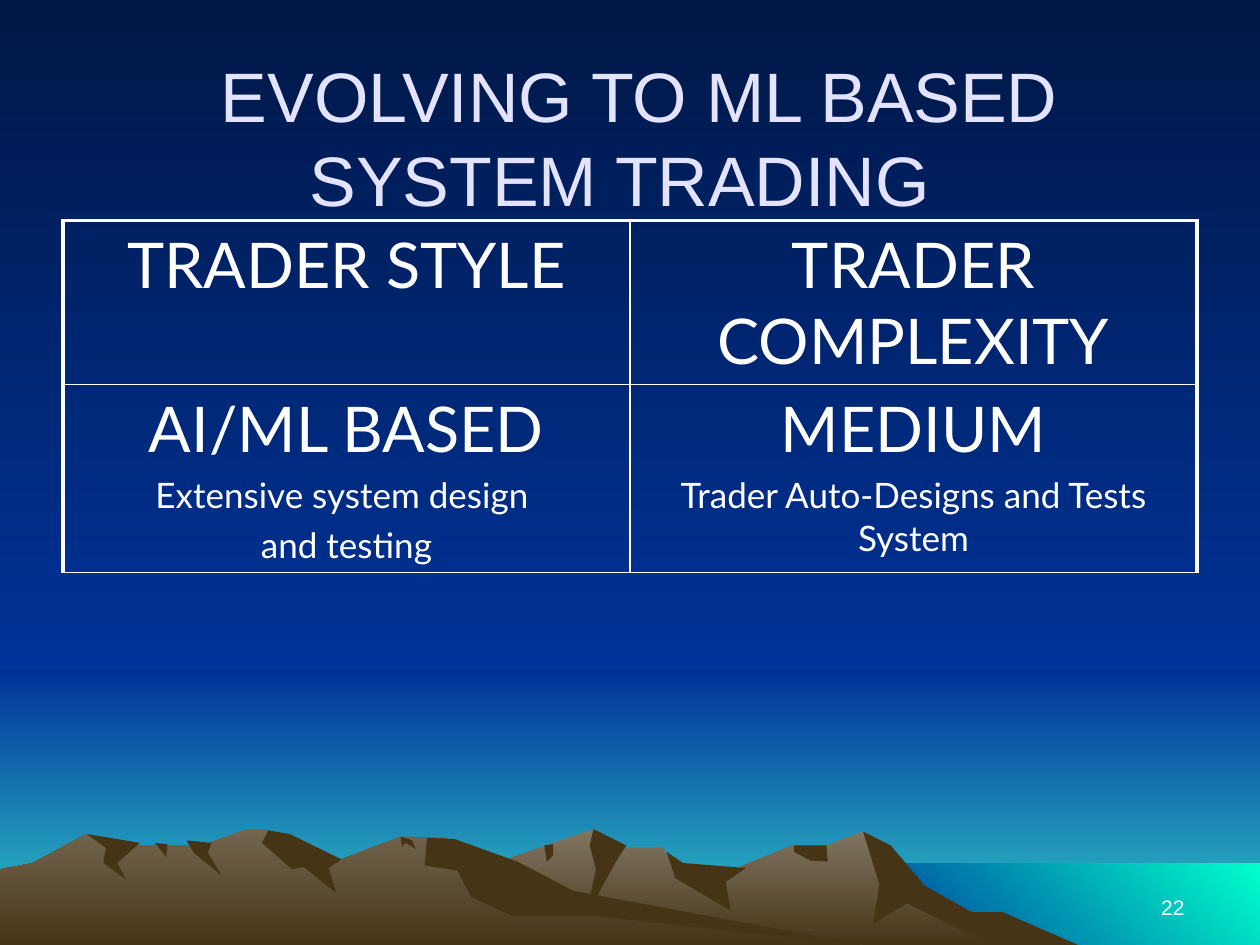
from pptx import Presentation
from pptx.dml.color import RGBColor
from pptx.enum.shapes import MSO_SHAPE
from pptx.enum.text import MSO_ANCHOR, PP_ALIGN
from pptx.oxml.ns import qn
from pptx.util import Pt
from lxml import etree

PX = 9144
RECT = MSO_SHAPE.RECTANGLE
MID, LOW = MSO_ANCHOR.MIDDLE, MSO_ANCHOR.BOTTOM
MIDDLE, RIGHT = PP_ALIGN.CENTER, PP_ALIGN.RIGHT

WHITE = RGBColor(0xFF, 0xFF, 0xFF)
LILAC = RGBColor(0xE3, 0xE3, 0xFF)
NAVY = RGBColor(0x00, 0x17, 0x46)
BLUE = RGBColor(0x00, 0x33, 0x99)
TEAL = RGBColor(0x33, 0xCC, 0xCC)
AQUA = RGBColor(0x00, 0xFF, 0xCC)
BROWN = RGBColor(0x46, 0x34, 0x16)
STONE = RGBColor(0x82, 0x76, 0x63)
EARTH = RGBColor(0x73, 0x65, 0x4E)

DOWN, RISE = 270, 45
THIN, THICK = 1, 2.25
SKY = (NAVY, BLUE, DOWN)
FAR = (STONE, BROWN, DOWN)
NEAR = (EARTH, BROWN, DOWN)

HILLS = [
    (FAR, [(821, 751), (723, 698), (685, 660), (656, 671), (629, 671), (566, 697),
           (536, 690), (526, 673), (486, 673), (471, 658), (394, 685), (258, 751)]),
    (BROWN, [(858, 751), (796, 724), (771, 724), (734, 703), (707, 671), (685, 660),
             (698, 702), (693, 733), (720, 717), (792, 752)]),
    (BROWN, [(471, 658), (468, 671), (473, 690), (465, 727), (490, 682), (497, 671)]),
    (BROWN, [(529, 676), (536, 697), (580, 723), (576, 700), (592, 689), (542, 685)]),
    (BROWN, [(630, 671), (630, 676), (643, 683), (657, 684), (656, 671)]),
    (BROWN, [(432, 671), (439, 670), (439, 679), (434, 684)]),
    (NEAR, [(690, 751), (432, 712), (354, 665), (318, 664), (271, 682), (236, 681),
            (212, 658), (196, 658), (160, 671), (94, 671), (68, 662), (26, 685),
            (0, 690), (0, 751)]),
    (BROWN, [(213, 659), (208, 669), (232, 690), (241, 688), (267, 709), (261, 689),
             (271, 682), (230, 662)]),
    (BROWN, [(361, 666), (339, 665), (337, 687), (363, 691), (374, 712), (407, 727),
             (472, 727), (690, 751), (455, 707), (411, 684)]),
    (BROWN, [(318, 664), (327, 667), (330, 674), (322, 669), (319, 672)]),
    (BROWN, [(148, 667), (168, 669), (165, 677), (176, 695), (154, 677)]),
    (BROWN, [(123, 669), (133, 670), (132, 680)]),
    (BROWN, [(69, 662), (111, 669), (93, 685), (100, 698), (82, 685), (84, 673)]),
]

CELLS = [
    [["TRADER STYLE"], ["TRADER COMPLEXITY"]],
    [["AI/ML BASED", "Extensive system design ", "and testing"],
     ["MEDIUM", "Trader Auto-Designs and Tests System"]],
]


def write(para, text, size=20, font="Lato", color=WHITE, align=MIDDLE, gap=0, lead=None):
    para.alignment = align
    para.space_before = Pt(gap)
    if lead:
        para.line_spacing = Pt(lead)
    run = para.add_run()
    run.text = text
    run.font.size = Pt(size)
    run.font.name = font
    run.font.color.rgb = color


def paint(fill, tone):
    if isinstance(tone, RGBColor):
        fill.solid()
        fill.fore_color.rgb = tone
        return
    fill.gradient()
    fill.gradient_angle = tone[2]
    for stop, color in zip(fill.gradient_stops, tone):
        stop.color.rgb = color


def edge(cell, sides):
    props = cell._tc.get_or_add_tcPr()
    for spot, (side, width) in enumerate(sides):
        line = etree.Element(qn("a:" + side), w=str(Pt(width)))
        solid = etree.SubElement(line, qn("a:solidFill"))
        etree.SubElement(solid, qn("a:srgbClr"), val=str(WHITE))
        props.insert(spot, line)


class Deck:
    def __init__(self, wide, high):
        self.show = Presentation()
        self.show.slide_width = wide * PX
        self.show.slide_height = high * PX
        self.slide = self.show.slides.add_slide(self.show.slide_layouts[6])
        self.shapes = self.slide.shapes

    def finish(self, shape, tone):
        shape.shadow.inherit = False
        paint(shape.fill, tone)
        shape.line.fill.background()

    def block(self, box, tone):
        self.finish(self.shapes.add_shape(RECT, *(n * PX for n in box)), tone)

    def hill(self, points, tone):
        pen = self.shapes.build_freeform(*points[0], scale=PX)
        pen.add_line_segments(points[1:], close=True)
        self.finish(pen.convert_to_shape(), tone)

    def label(self, box, text, anchor, indent=0, **style):
        frame = self.shapes.add_textbox(*(n * PX for n in box)).text_frame
        frame.word_wrap = True
        frame.vertical_anchor = anchor
        para = frame.paragraphs[0]
        if indent:
            para._p.get_or_add_pPr().set("indent", str(indent * PX))
        write(para, text, **style)

    def table(self, box, rows, highs):
        last = len(rows[0]) - 1
        grid = self.shapes.add_table(len(rows), last + 1, *(n * PX for n in box)).table
        grid.first_row = grid.horz_banding = False
        for r, row in enumerate(rows):
            grid.rows[r].height = highs[r] * PX
            for c, lines in enumerate(row):
                cell = grid.cell(r, c)
                cell.fill.background()
                edge(cell, [("lnL", THIN if c else THICK),
                            ("lnR", THICK if c == last else THIN),
                            ("lnT", THIN if r else THICK), ("lnB", THIN)])
                frame = cell.text_frame
                write(frame.paragraphs[0], lines[0], size=36)
                for text in lines[1:]:
                    write(frame.add_paragraph(), text, gap=4.5)


def main():
    deck = Deck(1000, 750)
    paint(deck.slide.background.fill, SKY)
    deck.block((0, 533, 1000, 217), (BLUE, TEAL, DOWN))
    deck.block((0, 0, 1000, 533), SKY)
    deck.block((683, 685, 317, 67), (BLUE, AQUA, RISE))
    for tone, points in HILLS:
        deck.hill(points, tone)
    deck.label((717, 683, 233, 52), "22", LOW, size=12, font="Arial", align=RIGHT)
    deck.label((42, 33, 900, 151), "EVOLVING TO ML BASED SYSTEM TRADING", MID,
               indent=31, size=40, font="Arial", color=LILAC, lead=48)
    deck.table((50, 175, 900, 278), CELLS, (130, 148))
    deck.show.save("out.pptx")


if __name__ == "__main__":
    main()
